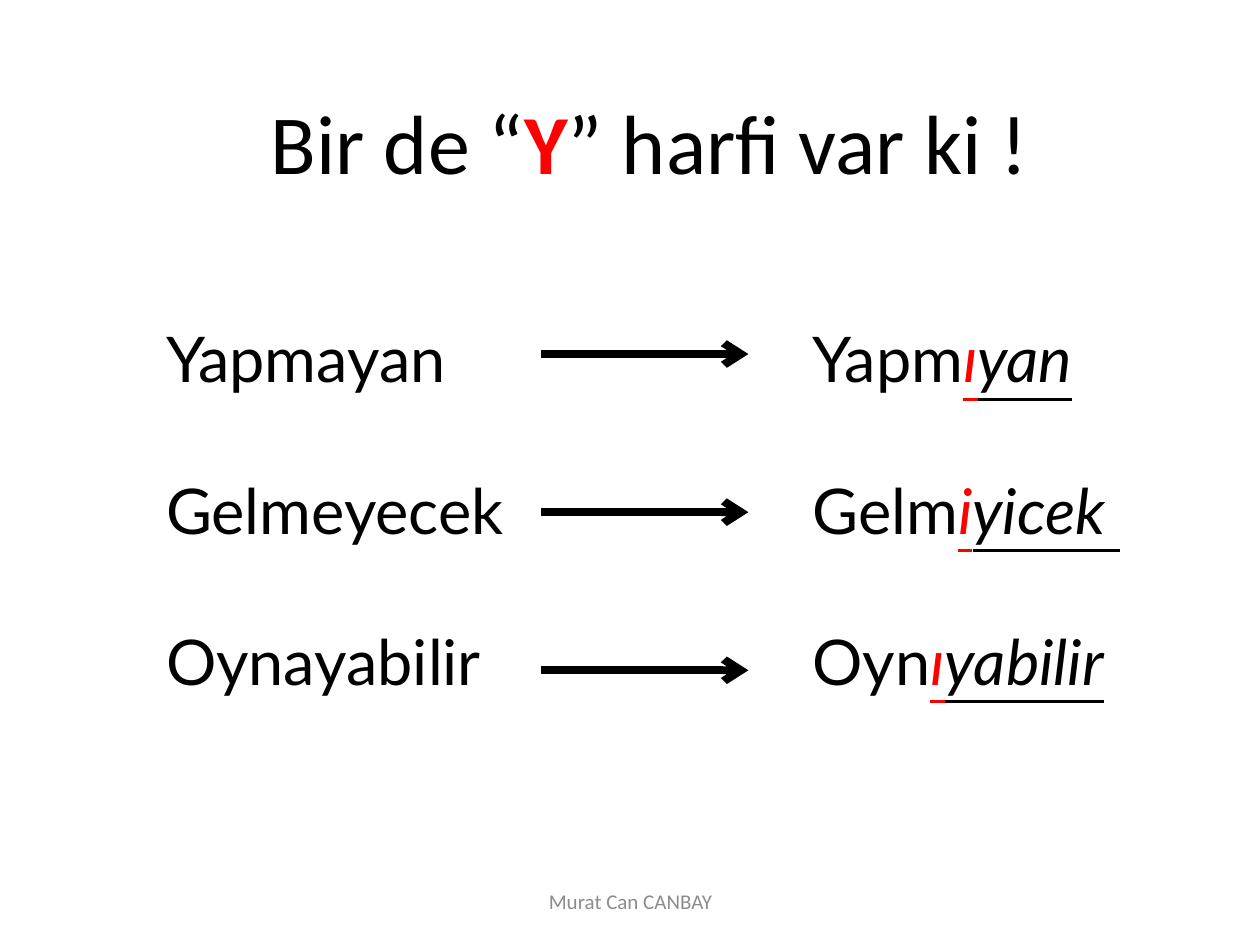
from dataclasses import dataclass

from lxml.etree import SubElement
from pptx import Presentation
from pptx.dml.color import RGBColor
from pptx.enum.shapes import MSO_CONNECTOR
from pptx.enum.text import MSO_ANCHOR, PP_ALIGN
from pptx.oxml.ns import qn
from pptx.util import Inches, Pt


@dataclass(frozen=True)
class Theme:
    text: RGBColor = RGBColor(0, 0, 0)
    accent: RGBColor = RGBColor(255, 0, 0)
    muted: RGBColor = RGBColor(0x8C, 0x8C, 0x8C)
    heading_font: str = "Calibri"
    word_font: str = "Lato"
    title_size: Pt = Pt(48)
    word_size: Pt = Pt(36)
    word_gap: Pt = Pt(43.2)
    footer_size: Pt = Pt(12)
    arrow_width: Pt = Pt(4.5)


theme = Theme()


def style(paragraph, name, size, color):
    paragraph.font.name = name
    paragraph.font.size = size
    paragraph.font.color.rgb = color


def add_word_box(slide, left, width):
    box = slide.shapes.add_textbox(Inches(left), Inches(2.49), Inches(width), Inches(3.2))
    box.text_frame.word_wrap = True
    return box.text_frame


presentation = Presentation()
presentation.slide_width = Inches(10)
presentation.slide_height = Inches(7.5)
slide = presentation.slides.add_slide(presentation.slide_layouts[5])

title = slide.shapes.title
title.left, title.top = Inches(1.03), Inches(0.33)
title.width, title.height = Inches(8.25), Inches(1.57)
title.text_frame.vertical_anchor = MSO_ANCHOR.MIDDLE
paragraph = title.text_frame.paragraphs[0]
paragraph.alignment = PP_ALIGN.CENTER
style(paragraph, theme.heading_font, theme.title_size, theme.text)
for text in ("Bir de “", "Y", "” harfi var ki !"):
    run = paragraph.add_run()
    run.text = text
    if text == "Y":
        run.font.bold = True
        run.font.color.rgb = theme.accent

words = [
    ("Yapmayan", "Yapm", "ı", "yan"),
    ("Gelmeyecek", "Gelm", "i", "yicek "),
    ("Oynayabilir", "Oyn", "ı", "yabilir"),
]
written_words = add_word_box(slide, 1.22, 3.07)
spoken_words = add_word_box(slide, 6.35, 3.2)

for index, (written, stem, vowel, ending) in enumerate(words):
    for frame, parts in ((written_words, [written]), (spoken_words, [stem, vowel, ending])):
        paragraph = frame.add_paragraph() if index else frame.paragraphs[0]
        paragraph.space_after = theme.word_gap
        style(paragraph, theme.word_font, theme.word_size, theme.text)
        for position, text in enumerate(parts):
            run = paragraph.add_run()
            run.text = text
            if position:
                run.font.italic = True
                run.font.underline = True
            if position == 1:
                run.font.color.rgb = theme.accent

    arrow_y = Inches(2.81 + index * 1.255)
    arrow = slide.shapes.add_connector(
        MSO_CONNECTOR.STRAIGHT, Inches(4.29), arrow_y, Inches(5.94), arrow_y
    )
    arrow.line.color.rgb = theme.text
    arrow.line.width = theme.arrow_width
    SubElement(arrow.line._get_or_add_ln(), qn("a:tailEnd"), type="arrow")
    SubElement(arrow._element.spPr, qn("a:effectLst"))

footer = slide.shapes.add_textbox(Inches(3.42), Inches(6.95), Inches(3.17), Inches(0.4))
footer.text_frame.word_wrap = True
footer.text_frame.vertical_anchor = MSO_ANCHOR.MIDDLE
paragraph = footer.text_frame.paragraphs[0]
paragraph.text = "Murat Can CANBAY"
paragraph.alignment = PP_ALIGN.CENTER
style(paragraph, theme.heading_font, theme.footer_size, theme.muted)

presentation.save("out.pptx")
